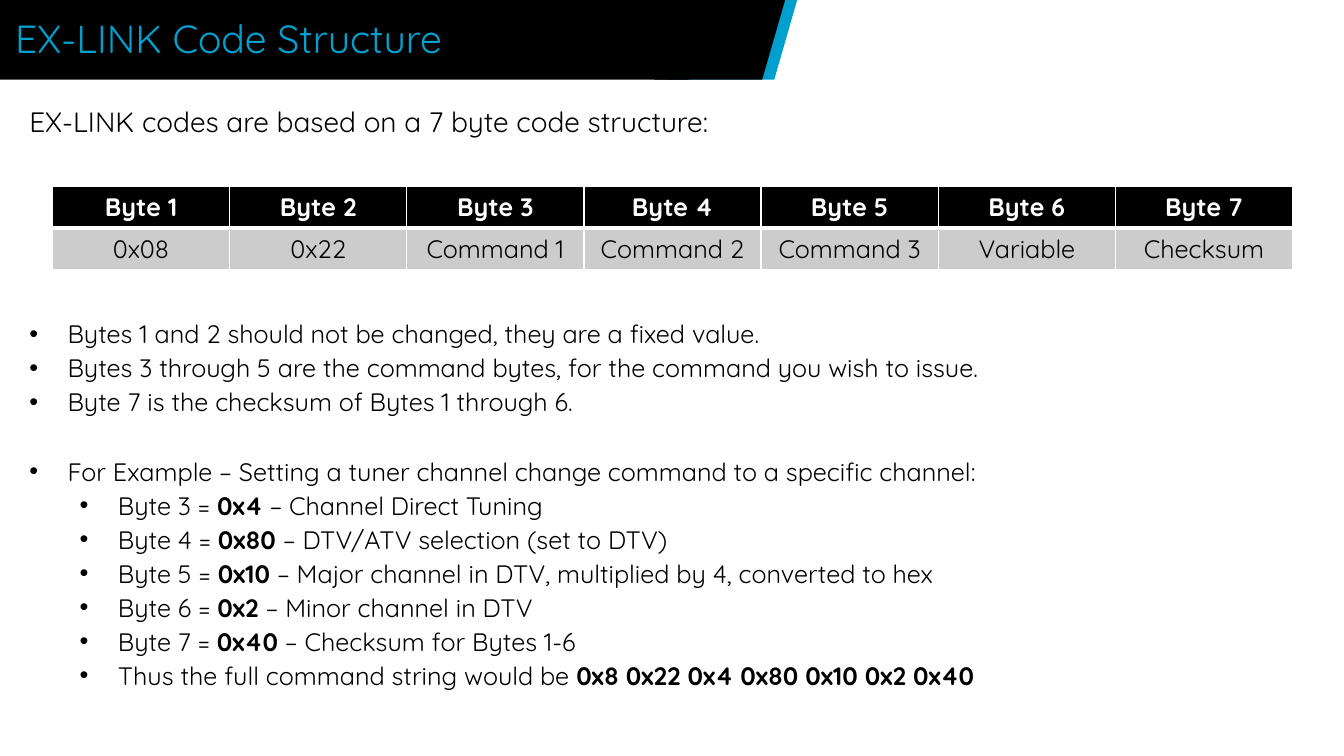
from lxml.etree import SubElement
from pptx import Presentation
from pptx.dml.color import RGBColor
from pptx.enum.shapes import MSO_SHAPE as Preset
from pptx.enum.text import MSO_ANCHOR as Anchor, MSO_AUTO_SIZE as AutoSize, PP_ALIGN as Align
from pptx.oxml import parse_xml
from pptx.oxml.ns import nsdecls, qn
from pptx.util import Inches, Pt

BLACK = RGBColor(0x00, 0x00, 0x00)
WHITE = RGBColor(0xFF, 0xFF, 0xFF)
GRAY = RGBColor(0xCC, 0xCC, 0xCC)
BANNER_BLUE = RGBColor(0x00, 0xA0, 0xCE)
TITLE_BLUE = RGBColor(0x00, 0xA1, 0xCE)
FONT = "Quicksand"

TITLE = "EX-LINK Code Structure"
INTRO = "EX-LINK codes are based on a 7 byte code structure:"
BYTE_VALUES = ["0x08", "0x22", "Command 1", "Command 2", "Command 3", "Variable", "Checksum"]
LINE_GAP = 2.7
EMPTY_LINE_GAP = 27.9
TABLE_GAP = 128.7
BULLETS = [
    (0, TABLE_GAP, ["Bytes 1 and 2 should not be changed, they are a fixed value."]),
    (0, LINE_GAP, ["Bytes 3 through 5 are the command bytes, for the command you wish to issue."]),
    (0, LINE_GAP, ["Byte 7 is the checksum of Bytes 1 through 6."]),
    (0, EMPTY_LINE_GAP, ["For Example – Setting a tuner channel change command to a specific channel:"]),
    (1, LINE_GAP, ["Byte 3 = ", "0x4", " – Channel Direct Tuning"]),
    (1, LINE_GAP, ["Byte 4 = ", "0x80", " – DTV/ATV selection (set to DTV)"]),
    (1, LINE_GAP, ["Byte 5 = ", "0x10", " – Major channel in DTV, multiplied by 4, converted to hex"]),
    (1, LINE_GAP, ["Byte 6 = ", "0x2", " – Minor channel in DTV"]),
    (1, LINE_GAP, ["Byte 7 = ", "0x40", " – Checksum for Bytes 1-6"]),
    (1, LINE_GAP, ["Thus the full command string would be ", "0x8 0x22 0x4 0x80 0x10 0x2 0x40"]),
]


def format_run(run, size, color, bold=False):
    run.font.name = FONT
    run.font.size = Pt(size)
    run.font.color.rgb = color
    run.font.bold = bold


def paint(shape, color):
    shape.shadow.inherit = False
    shape.fill.solid()
    shape.fill.fore_color.rgb = color
    shape.line.fill.background()


def add_slanted_band(slide, left, color):
    top, bottom, width, slant = -0.01, 0.79, 1.07, 0.23
    builder = slide.shapes.build_freeform(Inches(left), Inches(bottom))
    corners = [(left + width, bottom), (left + width + slant, top), (left + slant, top)]
    builder.add_line_segments([(Inches(x), Inches(y)) for x, y in corners], close=True)
    paint(builder.convert_to_shape(), color)


def add_banner(slide):
    add_slanted_band(slide, 6.61, BANNER_BLUE)
    bar = slide.shapes.add_shape(
        Preset.RECTANGLE, Inches(-0.01), Inches(-0.01), Inches(6.84), Inches(0.8))
    paint(bar, BLACK)
    add_slanted_band(slide, 6.49, BLACK)


def place(placeholder, left, top, width, height, anchor):
    placeholder.left, placeholder.top = Inches(left), Inches(top)
    placeholder.width, placeholder.height = Inches(width), Inches(height)
    frame = placeholder.text_frame
    frame.auto_size = AutoSize.NONE
    frame.word_wrap = True
    frame.vertical_anchor = anchor
    placeholder.element.getparent().append(placeholder.element)
    return frame


def fill_title(slide):
    frame = place(slide.shapes.title, 0.05, 0.04, 7.45, 0.68, Anchor.MIDDLE)
    frame.text = TITLE
    paragraph = frame.paragraphs[0]
    paragraph.alignment = Align.LEFT
    format_run(paragraph.runs[0], 28, TITLE_BLUE)


def set_bullet(paragraph, character, margin, indent):
    properties = paragraph._p.get_or_add_pPr()
    properties.set("marL", str(Inches(margin)))
    properties.set("indent", str(Inches(indent)))
    if character:
        SubElement(properties, qn("a:buFont")).set("typeface", "Arial")
        SubElement(properties, qn("a:buChar")).set("char", character)
    else:
        SubElement(properties, qn("a:buNone"))


def add_bullet(frame, level, gap, parts):
    paragraph = frame.add_paragraph()
    paragraph.level = level
    set_bullet(paragraph, "•", 0.38 + 0.5 * level, -0.38)
    paragraph.space_before = Pt(gap)
    for index, part in enumerate(parts):
        run = paragraph.add_run()
        run.text = part
        format_run(run, 18, BLACK, bold=index == 1)


def fill_body(slide):
    frame = place(slide.placeholders[1], 0.19, 0.99, 12.95, 5.95, Anchor.TOP)
    frame.text = INTRO
    paragraph = frame.paragraphs[0]
    set_bullet(paragraph, None, 0, 0)
    paragraph.space_before = Pt(0)
    format_run(paragraph.runs[0], 20, BLACK)
    for level, gap, parts in BULLETS:
        add_bullet(frame, level, gap, parts)


def set_borders(cell, widths):
    properties = cell._tc.get_or_add_tcPr()
    for index, (side, width) in enumerate(widths.items()):
        properties.insert(index, parse_xml(
            f'<a:ln{side} {nsdecls("a")} w="{Pt(width)}"><a:solidFill>'
            f'<a:srgbClr val="{WHITE}"/></a:solidFill></a:ln{side}>'))


def format_cell(cell, text, fill, color, bold, borders):
    cell.text = text
    cell.vertical_anchor = Anchor.MIDDLE
    cell.fill.solid()
    cell.fill.fore_color.rgb = fill
    set_borders(cell, borders)
    paragraph = cell.text_frame.paragraphs[0]
    paragraph.alignment = Align.CENTER
    format_run(paragraph.runs[0], 18, color, bold)


def add_byte_table(slide):
    count = len(BYTE_VALUES)
    table = slide.shapes.add_table(
        2, count, Inches(0.52), Inches(1.85), Inches(12.3), Inches(0.81)).table
    header_borders = {"L": 1, "R": 1, "T": 1, "B": 3}
    value_borders = {"L": 1, "R": 1, "T": 3, "B": 1}
    for column, value in enumerate(BYTE_VALUES):
        format_cell(table.cell(0, column), f"Byte {column + 1}", BLACK, WHITE, True, header_borders)
        format_cell(table.cell(1, column), value, GRAY, BLACK, False, value_borders)


def main():
    presentation = Presentation()
    presentation.slide_width = Inches(13.33)
    presentation.slide_height = Inches(7.5)
    slide = presentation.slides.add_slide(presentation.slide_layouts[1])
    add_banner(slide)
    fill_body(slide)
    fill_title(slide)
    add_byte_table(slide)
    presentation.save("out.pptx")


if __name__ == "__main__":
    main()
